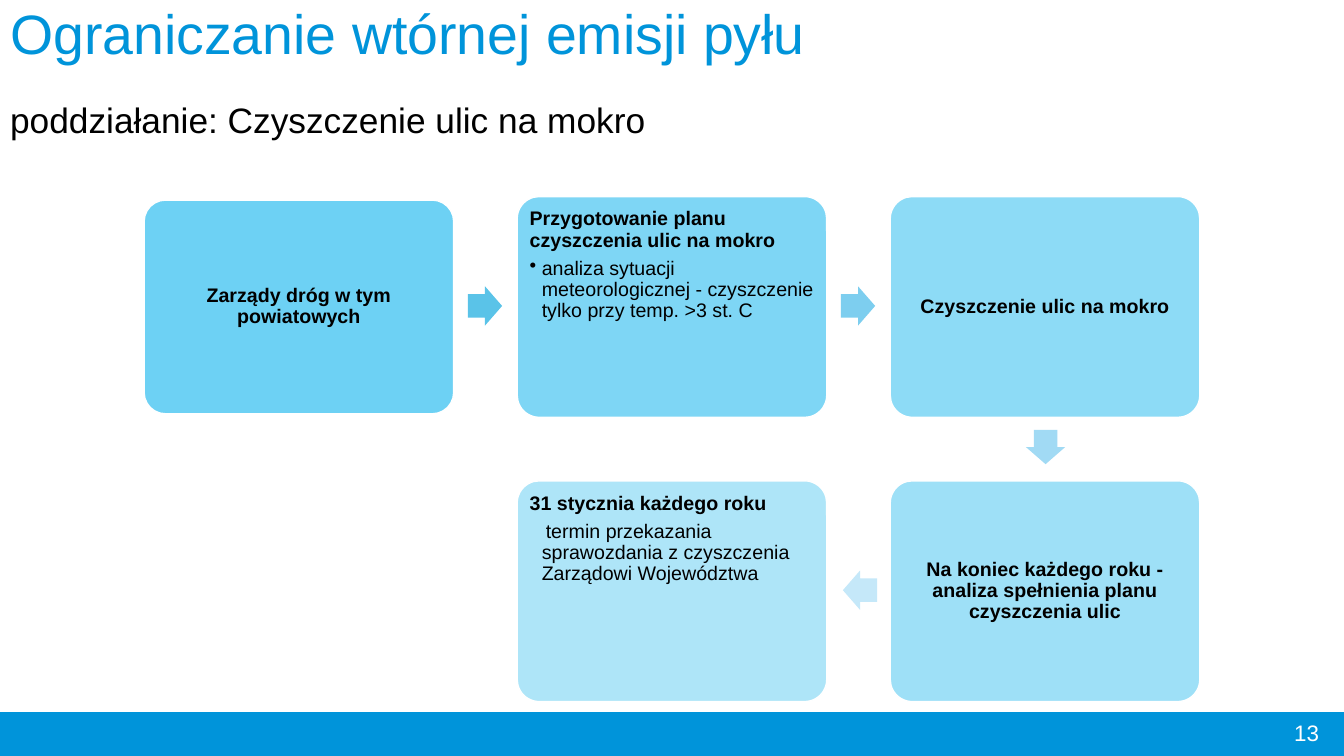
from dataclasses import dataclass

from lxml import etree
from pptx import Presentation
from pptx.dml.color import RGBColor
from pptx.enum.shapes import MSO_SHAPE
from pptx.enum.text import MSO_ANCHOR, MSO_AUTO_SIZE, PP_ALIGN
from pptx.oxml.ns import qn
from pptx.util import Inches, Pt

RECT, ROUND, ARROW = MSO_SHAPE.RECTANGLE, MSO_SHAPE.ROUNDED_RECTANGLE, MSO_SHAPE.RIGHT_ARROW
TOP, MIDDLE = MSO_ANCHOR.TOP, MSO_ANCHOR.MIDDLE
LEFT, CENTER, RIGHT = PP_ALIGN.LEFT, PP_ALIGN.CENTER, PP_ALIGN.RIGHT
NO_FIT = MSO_AUTO_SIZE.NONE

COLORS = {"brand": "0094DA", "card": "5ECCF3", "text": "000000", "white": "FFFFFF"}
FONT = "Arial"
CARD_W, CARD_H = 3.07, 2.19
GRID_X, GRID_Y, STEP_X, STEP_Y = 1.43, 1.95, 3.7, 2.82
ARROW_W, ARROW_H = 0.34, 0.39
INDENT = 0.12


@dataclass
class Card:
    """A rounded step of the process on the grid."""
    col: int
    row: int
    alpha: int
    head: str
    detail: str = ""
    bullet: str = ""
    first: float = 0
    height: float = CARD_H


@dataclass
class Arrow:
    """An arrow between two steps."""
    left: float
    top: float
    color: str
    turn: int = 0


CARDS = [
    Card(0, 0, 90, "Zarządy dróg w tym powiatowych", height=2.12),
    Card(1, 0, 80, "Przygotowanie planu czyszczenia ulic na mokro",
         "analiza sytuacji meteorologicznej - czyszczenie tylko przy temp. >3 st. C",
         "•", -INDENT),
    Card(2, 0, 70, "Czyszczenie ulic na mokro"),
    Card(2, 1, 60, "Na koniec każdego roku - analiza spełnienia planu czyszczenia ulic"),
    Card(1, 1, 50, "31 stycznia każdego roku",
         "termin przekazania sprawozdania z czyszczenia Zarządowi Województwa",
         first=0.04),
]
ARROWS = [
    Arrow(4.64, 2.84, "5AC3E8"),
    Arrow(8.34, 2.84, "7DCEEF"),
    Arrow(10.2, 4.24, "A1DAF4", 90),
    Arrow(8.36, 5.66, "C5E8F9", 180),
]


def style(para, size: float, color: str, bold: bool = False, align=LEFT) -> None:
    """Format a paragraph and its runs."""
    para.alignment = align
    for run in para.runs:
        font = run.font
        font.name, font.size, font.bold = FONT, Pt(size), bold
        font.color.rgb = RGBColor.from_string(color)


def add_block(slide, kind, left: float, top: float, width: float, height: float, color: str):
    """Add a filled shape without shadow or line."""
    shape = slide.shapes.add_shape(kind, Inches(left), Inches(top), Inches(width), Inches(height))
    shape.shadow.inherit = False
    shape.fill.solid()
    shape.fill.fore_color.rgb = RGBColor.from_string(color)
    shape.line.fill.background()
    return shape


def set_line(shape, color: str) -> None:
    """Give a shape a one-point outline."""
    shape.line.color.rgb = RGBColor.from_string(color)
    shape.line.width = Pt(1)


def add_detail(frame, card: Card) -> None:
    """Add the indented detail under a card's heading."""
    para = frame.add_paragraph()
    para.text = card.detail
    para.level = 1
    props = para._p.get_or_add_pPr()
    props.set("marL", str(Inches(INDENT)))
    props.set("indent", str(Inches(card.first)))
    if card.bullet:
        etree.SubElement(props, qn("a:buChar"), char=card.bullet)
    else:
        etree.SubElement(props, qn("a:buNone"))
    para.line_spacing = 0.9
    para.space_after = Pt(2)
    style(para, 14, COLORS["text"])


def add_card(slide, card: Card) -> None:
    """Draw one step with its text."""
    left = GRID_X + card.col * STEP_X
    top = GRID_Y + card.row * STEP_Y + (CARD_H - card.height) / 2
    shape = add_block(slide, ROUND, left, top, CARD_W, card.height, COLORS["card"])
    shape.adjustments[0] = 0.1
    tint = shape._element.spPr.find(qn("a:solidFill")).find(qn("a:srgbClr"))
    etree.SubElement(tint, qn("a:alpha"), val=str(card.alpha * 1000))
    set_line(shape, COLORS["white"])
    frame = shape.text_frame
    frame.text = card.head
    frame.word_wrap = True
    frame.margin_left = frame.margin_right = Inches(0.06)
    frame.margin_top = frame.margin_bottom = Inches(0.06)
    frame.vertical_anchor = TOP if card.detail else MIDDLE
    head = frame.paragraphs[0]
    head.line_spacing = 0.9
    style(head, 14, COLORS["text"], True, LEFT if card.detail else CENTER)
    if card.detail:
        head.space_after = Pt(5)
        add_detail(frame, card)


def add_arrow(slide, arrow: Arrow) -> None:
    """Draw one arrow."""
    shape = add_block(slide, ARROW, arrow.left, arrow.top, ARROW_W, ARROW_H, arrow.color)
    shape.adjustments[0], shape.adjustments[1] = 0.6, 0.5
    shape.rotation = arrow.turn


def add_title(slide) -> None:
    """Fill the title with its heading and subheading."""
    title = slide.shapes.title
    title.left, title.top = Inches(0), Inches(-0.01)
    title.width, title.height = Inches(10.3), Inches(1.48)
    frame = title.text_frame
    frame.text = "Ograniczanie wtórnej emisji pyłu\npoddziałanie: Czyszczenie ulic na mokro"
    frame.word_wrap = True
    frame.auto_size = NO_FIT
    frame.vertical_anchor = MIDDLE
    head, sub = frame.paragraphs
    head.line_spacing = sub.line_spacing = 0.9
    sub.space_before = Pt(26)
    style(head, 39.6, COLORS["brand"])
    style(sub, 25.2, COLORS["text"])


def add_foot(slide) -> None:
    """Draw the bottom bar and the page number."""
    bar = add_block(slide, RECT, 0, 7.07, 13.33, 0.43, COLORS["brand"])
    set_line(bar, COLORS["brand"])
    box = slide.shapes.add_textbox(Inches(10.18), Inches(7.07), Inches(3), Inches(0.4))
    frame = box.text_frame
    frame.text = "13"
    frame.word_wrap = True
    frame.vertical_anchor = MIDDLE
    style(frame.paragraphs[0], 16, COLORS["white"], align=RIGHT)


def main() -> None:
    """Build and save the slide."""
    deck = Presentation()
    deck.slide_width, deck.slide_height = Inches(13.33), Inches(7.5)
    slide = deck.slides.add_slide(deck.slide_layouts[5])
    add_title(slide)
    add_foot(slide)
    for card in CARDS:
        add_card(slide, card)
    for arrow in ARROWS:
        add_arrow(slide, arrow)
    deck.save("out.pptx")


if __name__ == "__main__":
    main()
